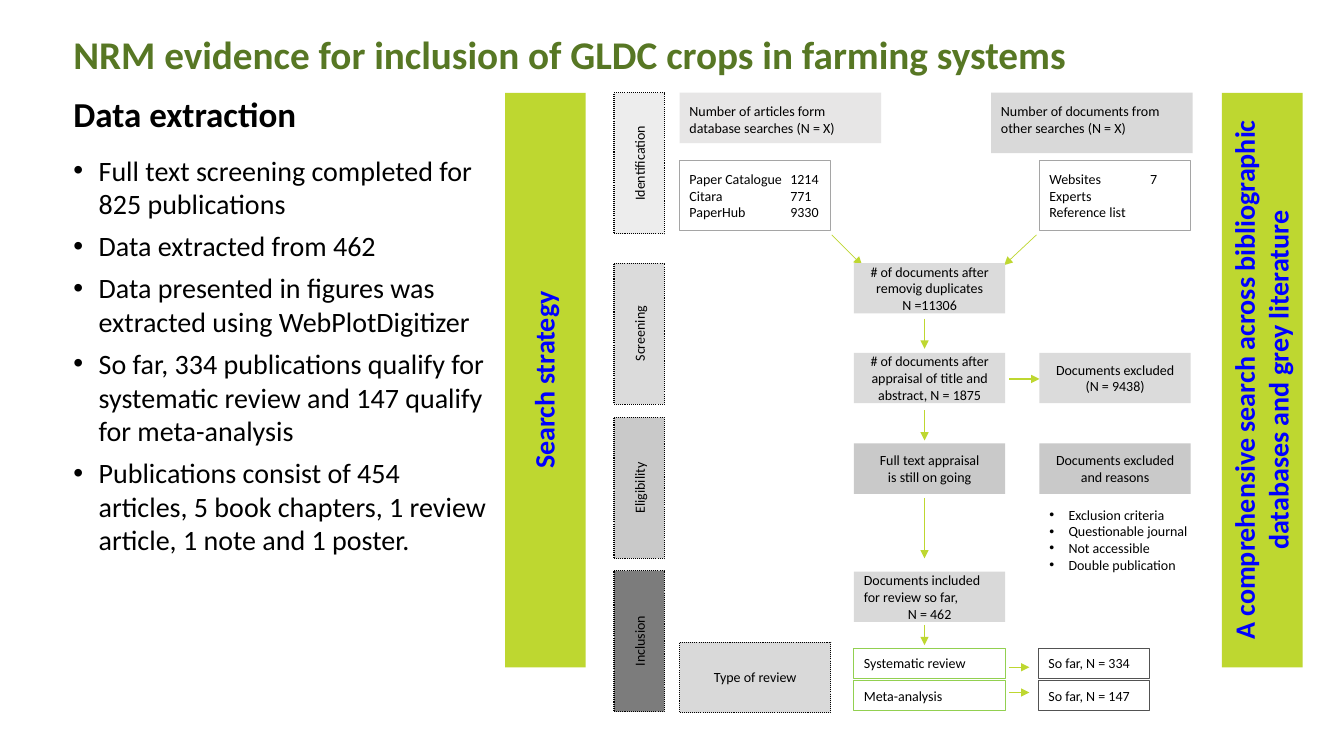
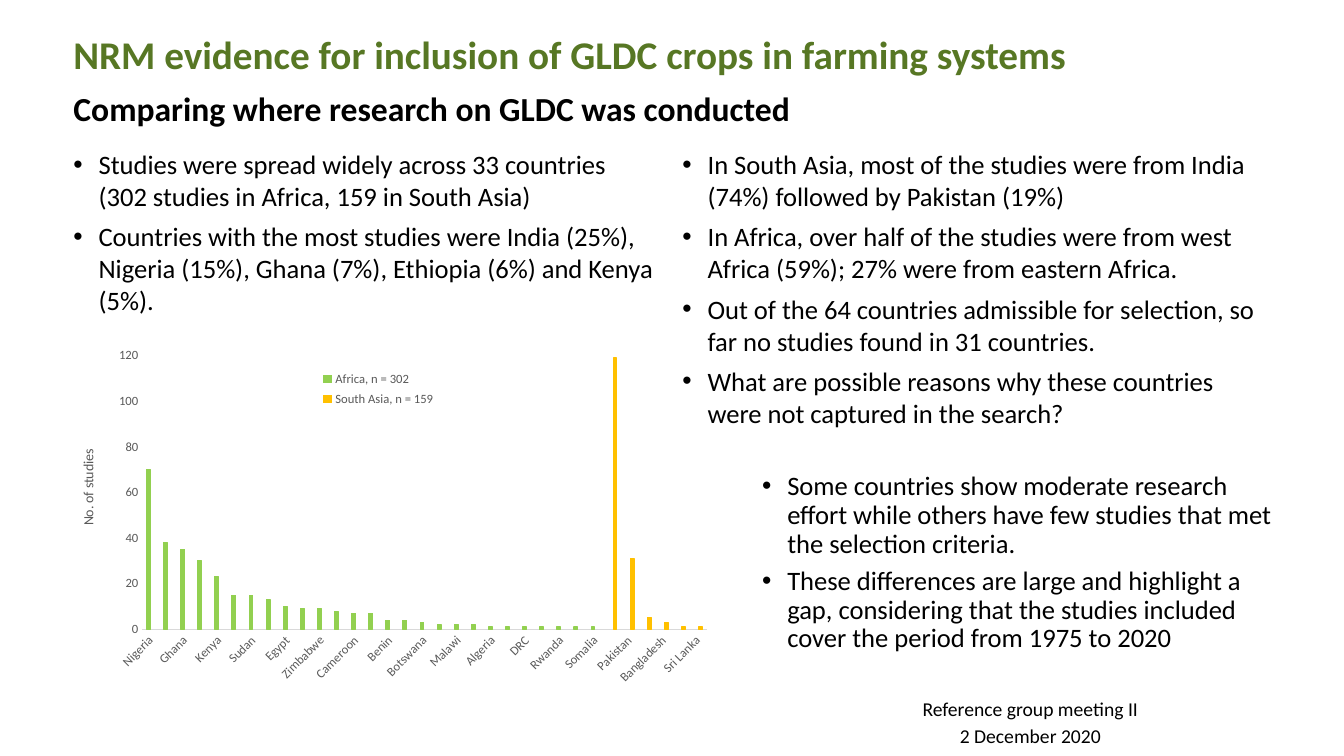
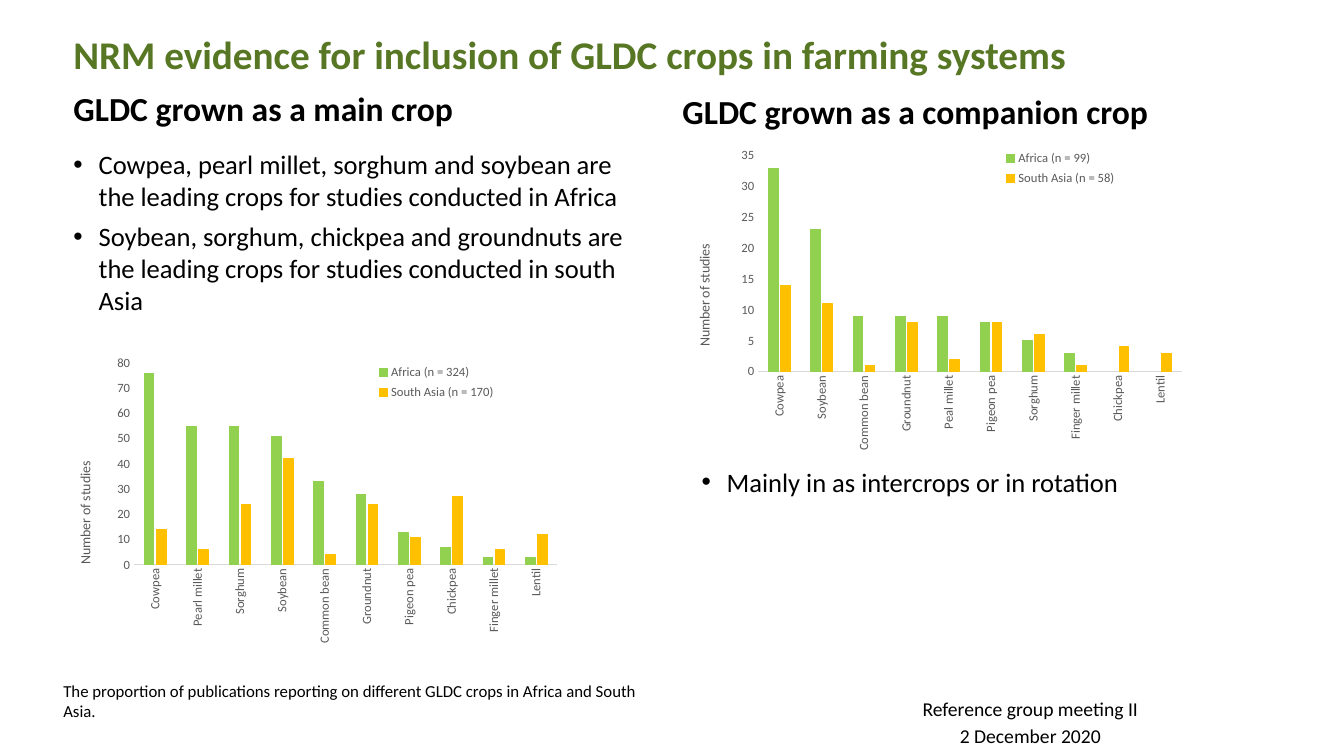
from collections import namedtuple

from lxml import etree
from pptx import Presentation
from pptx.chart.data import CategoryChartData
from pptx.dml.color import RGBColor
from pptx.enum.chart import XL_CHART_TYPE, XL_LEGEND_POSITION, XL_TICK_MARK
from pptx.enum.dml import MSO_LINE
from pptx.enum.shapes import MSO_CONNECTOR, MSO_SHAPE
from pptx.enum.text import MSO_ANCHOR, PP_ALIGN
from pptx.oxml.ns import qn
from pptx.util import Inches, Pt

COLUMN_CLUSTERED = XL_CHART_TYPE.COLUMN_CLUSTERED
CORNER = XL_LEGEND_POSITION.CORNER
NO_TICK = XL_TICK_MARK.NONE
DOTTED = MSO_LINE.ROUND_DOT
STRAIGHT = MSO_CONNECTOR.STRAIGHT
RECTANGLE = MSO_SHAPE.RECTANGLE
TOP, MIDDLE = MSO_ANCHOR.TOP, MSO_ANCHOR.MIDDLE
LEFT, CENTER = PP_ALIGN.LEFT, PP_ALIGN.CENTER

FONT = "Calibri"
BLACK = RGBColor(0x00, 0x00, 0x00)
BLUE = RGBColor(0x00, 0x00, 0xFF)
TITLE_GREEN = RGBColor(0x57, 0x77, 0x24)
LIME = RGBColor(0xBE, 0xD7, 0x30)
GREEN = RGBColor(0x92, 0xD0, 0x50)
AMBER = RGBColor(0xFF, 0xC0, 0x00)
CHART_TEXT = RGBColor(0x59, 0x59, 0x59)
SILVER = RGBColor(0xD9, 0xD9, 0xD9)
PALE = RGBColor(0xE7, 0xE6, 0xE6)
FAINT = RGBColor(0xED, 0xED, 0xED)
LIGHT = RGBColor(0xDB, 0xDB, 0xDB)
MEDIUM = RGBColor(0xC9, 0xC9, 0xC9)
DARK = RGBColor(0x7C, 0x7C, 0x7C)
LIST_LINE = RGBColor(0xA5, 0xA5, 0xA5)
RESULT_LINE = RGBColor(0x52, 0x52, 0x52)

Box = namedtuple("Box", "left top width height")
Places = namedtuple("Places", "plot legend title")

PAGE = Box(0, 0, 13.33, 7.5)
MARGIN = 0.63
SECOND_COLUMN = 6.67
COLUMN_WIDTH = 6
HEADING_TOP = 0.87
BODY_TOP = 1.42
BAND_TOP = 0.92
TITLE = "NRM evidence for inclusion of GLDC crops in farming systems"
FOOTER = ["Reference group meeting II", "2 December 2020"]


def emu(box):
    return [Inches(length) for length in box]


def within(region, left, top, width, height):
    return Box(region.left + left, region.top + top, width, height)


def write_text(holder, text, size=10, color=BLACK, bold=False, align=LEFT, anchor=TOP,
               inset=0.05, indent=0, tab=0, before=0, spacing=1.0):
    frame = holder.text_frame
    frame.word_wrap = True
    frame.vertical_anchor = anchor
    frame.margin_left = frame.margin_right = Inches(0.1)
    frame.margin_top = frame.margin_bottom = Inches(inset)
    lines = [text] if isinstance(text, str) else text
    for index, line in enumerate(lines):
        para = frame.add_paragraph() if index else frame.paragraphs[0]
        properties = para._p.get_or_add_pPr()
        if indent:
            properties.set("marL", str(Inches(indent)))
            properties.set("indent", str(-Inches(indent)))
            etree.SubElement(properties, qn("a:buFont")).set("typeface", "Arial")
            etree.SubElement(properties, qn("a:buChar")).set("char", "•")
        if tab:
            stops = etree.SubElement(properties, qn("a:tabLst"))
            etree.SubElement(stops, qn("a:tab"), pos=str(Inches(tab)), algn="l")
        para.alignment = align
        para.line_spacing = spacing
        if index:
            para.space_before = Pt(before)
        span = para.add_run()
        span.text = line
        span.font.name = FONT
        span.font.size = Pt(size)
        span.font.bold = bold
        span.font.color.rgb = color


def add_text(page, box, text, **style):
    write_text(page.shapes.add_textbox(*emu(box)), text, **style)


def add_heading(page, box, text, size=24, color=BLACK):
    add_text(page, box, text, size=size, color=color, bold=True, spacing=0.9)


def add_bullets(page, box, lines, size=19, spacing=1.0):
    add_text(page, box, lines, size=size, indent=0.25, before=6, spacing=spacing)


def add_footer(page):
    box = Box(8.97, 6.86, 2.5, 0.62)
    add_text(page, box, FOOTER, size=14, align=CENTER, before=2.8)


def new_page(deck):
    page = deck.slides.add_slide(deck.slide_layouts[6])
    add_heading(page, Box(MARGIN, 0.3, 10.33, 0.54), TITLE, size=28, color=TITLE_GREEN)
    return page


def add_block(page, box, text, fill=None, line=None, dotted=False, **style):
    block = page.shapes.add_shape(RECTANGLE, *emu(box))
    block.shadow.inherit = False
    if fill is None:
        block.fill.background()
    else:
        block.fill.solid()
        block.fill.fore_color.rgb = fill
    if line is None:
        block.line.fill.background()
    else:
        block.line.color.rgb = line
        block.line.width = Pt(0.75)
        if dotted:
            block.line.dash_style = DOTTED
    write_text(block, text, **style)
    return block


def add_upright(page, box, text, anchor=MIDDLE, **style):
    middle = box.left + box.width / 2
    center = box.top + box.height / 2
    turned = Box(middle - box.height / 2, center - box.width / 2, box.height, box.width)
    add_block(page, turned, text, align=CENTER, anchor=anchor, **style).rotation = 270


def add_arrow(page, region, start, end, width=0.75):
    points = [Inches(region[axis] + point[axis]) for point in (start, end) for axis in (0, 1)]
    arrow = page.shapes.add_connector(STRAIGHT, *points)
    arrow.line.color.rgb = LIME
    arrow.line.width = Pt(width)
    properties = arrow._element.spPr
    etree.SubElement(properties.find(qn("a:ln")), qn("a:tailEnd")).set("type", "triangle")
    etree.SubElement(properties, qn("a:effectLst"))


def draw_stages(page, region):
    stages = [("Identification", FAINT, 0), ("Screening", LIGHT, 1.69),
              ("Eligibility", MEDIUM, 3.22), ("Inclusion", DARK, 4.74)]
    for name, fill, top in stages:
        add_upright(page, within(region, 0, top, 0.5, 1.4), name, fill=fill,
                    line=BLACK, dotted=True, inset=0.1)


def draw_sources(page, region, source, last):
    add_block(page, within(region, source, 0, 2, 0.5),
              "Number of articles form database searches (N = X)", fill=PALE, inset=0.1)
    add_block(page, within(region, 3.74, 0, 2, 0.6),
              "Number of documents from other searches (N = X)", fill=SILVER, inset=0.1)
    lists = [(source, ["Paper Catalogue\t1214", "Citara\t771", "PaperHub\t9330"]),
             (last, ["Websites\t7", "Experts", "Reference list"])]
    for left, lines in lists:
        add_block(page, within(region, left, 0.67, 1.5, 0.7), lines, line=LIST_LINE,
                  inset=0.1, tab=1)
    for start, end in [((2.16, 1.41), (2.46, 1.71)), ((4.19, 1.41), (3.87, 1.71))]:
        add_arrow(page, region, start, end, width=0.5)


def draw_flow(page, region):
    source, middle, last = 0.65, 2.38, 4.22
    draw_stages(page, region)
    draw_sources(page, region, source, last)
    steps = [
        (middle, 1.69, LIGHT, ["# of documents after removig duplicates", "N =11306"]),
        (middle, 2.58, LIGHT, "# of documents after appraisal of title and abstract, N = 1875"),
        (last, 2.58, LIGHT, "Documents excluded (N = 9438)"),
        (middle, 3.48, MEDIUM, ["Full text appraisal", "is still on going"]),
        (last, 3.48, MEDIUM, "Documents excluded and reasons"),
    ]
    for left, top, fill, text in steps:
        add_block(page, within(region, left, top, 1.5, 0.5), text, fill=fill,
                  align=CENTER, anchor=MIDDLE, inset=0.1)
    included = add_block(page, within(region, middle, 4.75, 1.5, 0.5),
                         ["Documents included for review so far,", "N = 462"],
                         fill=SILVER, anchor=MIDDLE, inset=0.1)
    included.text_frame.paragraphs[1].alignment = CENTER
    add_text(page, within(region, last, 4, 1.63, 0.88),
             ["Exclusion criteria", "Questionable journal", "Not accessible",
              "Double publication"], indent=0.19, inset=0.1)
    add_block(page, within(region, source, 5.45, 1.5, 0.7), "Type of review", fill=SILVER,
              line=BLACK, dotted=True, align=CENTER, anchor=MIDDLE, inset=0.1)
    reviews = [("Systematic review", "So far, N = 334"), ("Meta-analysis", "So far, N = 147")]
    for row, (review, result) in enumerate(reviews):
        top = 5.51 + row * 0.32
        add_block(page, within(region, middle, top, 1.5, 0.3), review, line=GREEN,
                  anchor=MIDDLE, inset=0.1)
        add_block(page, within(region, 4.21, top, 1.1, 0.3), result, line=RESULT_LINE,
                  anchor=MIDDLE, inset=0.1)
        level = 5.7 + row * 0.25
        add_arrow(page, region, (3.92, level), (4.12, level))
    add_arrow(page, region, (3.92, 2.84), (last, 2.84))
    for top, bottom in [(2.24, 2.54), (3.15, 3.45), (4.02, 4.62), (5.28, 5.48)]:
        add_arrow(page, region, (3.08, top), (3.08, bottom))


def place_part(element, index, shares, inner=False):
    for old in element.findall(qn("c:layout")):
        element.remove(old)
    layout = etree.Element(qn("c:layout"))
    manual = etree.SubElement(layout, qn("c:manualLayout"))
    settings = [("layoutTarget", "inner")] if inner else []
    settings += [("xMode", "edge"), ("yMode", "edge")]
    settings += list(zip("xywh", shares))
    for name, value in settings:
        etree.SubElement(manual, qn("c:" + name)).set("val", str(value))
    element.insert(index, layout)


def style_font(font, size):
    font.name = FONT
    font.size = Pt(size)
    font.bold = False
    font.color.rgb = CHART_TEXT


def turn_text(element, degrees):
    body = element.find(".//" + qn("a:bodyPr"))
    body.set("rot", str(degrees * 60000))
    body.set("vert", "horz")


def add_column_chart(page, box, categories, series, axis_title, top_value, step, places,
                     label_turn=-90):
    data = CategoryChartData()
    data.categories = categories
    for name, values in series:
        data.add_series(name, values)
    chart = page.shapes.add_chart(COLUMN_CLUSTERED, *emu(box), data).chart
    chart.has_title = False
    style_font(chart.font, 10)

    plot = chart.plots[0]
    plot.vary_by_categories = False
    plot.gap_width = 219
    plot.overlap = -27
    for bars, color in zip(plot.series, (GREEN, AMBER)):
        bars.format.fill.solid()
        bars.format.fill.fore_color.rgb = color
        bars.format.line.color.rgb = color
        bars.format.line.width = Pt(0.75)

    names, values = chart.category_axis, chart.value_axis
    for axis in (names, values):
        axis.major_tick_mark = axis.minor_tick_mark = NO_TICK
        axis.has_major_gridlines = False
        style_font(axis.tick_labels.font, 9)
    names.format.line.color.rgb = SILVER
    names.format.line.width = Pt(0.75)
    turn_text(names._element.find(qn("c:txPr")), label_turn)
    values.format.line.fill.background()
    values.minimum_scale, values.maximum_scale, values.major_unit = 0, top_value, step

    frame = values.axis_title.text_frame
    frame.text = axis_title
    style_font(frame.paragraphs[0].runs[0].font, 10)
    title = values.axis_title._element
    turn_text(title, -90)

    chart.has_legend = True
    chart.legend.position = CORNER
    chart.legend.include_in_layout = True
    style_font(chart.legend.font, 9)
    place_part(chart.legend._element, 1, places.legend)
    place_part(title, 1, places.title)
    place_part(chart._chartSpace.find(".//" + qn("c:plotArea")), 0, places.plot, inner=True)


def build_extraction(deck):
    page = new_page(deck)
    add_heading(page, Box(MARGIN, BAND_TOP, 4.37, 0.48), "Data extraction", size=25)
    add_bullets(page, Box(MARGIN, 1.47, 4.38, 4.14), [
        "Full text screening completed for 825 publications",
        "Data extracted from 462",
        "Data presented in figures was extracted using WebPlotDigitizer",
        "So far, 334 publications qualify for systematic review and 147 qualify "
        "for meta-analysis",
        "Publications consist of 454 articles, 5 book chapters, 1 review article, "
        "1 note and 1 poster.",
    ], size=20)
    bands = [(5.01, "Search strategy", MIDDLE, 0.9),
             (12.12, "A comprehensive search across bibliographic databases and grey "
              "literature", TOP, 1.0)]
    for left, text, anchor, spacing in bands:
        add_upright(page, Box(left, BAND_TOP, 0.8, 5.7), text, anchor=anchor, fill=LIME,
                    size=20, color=BLUE, bold=True, spacing=spacing)
    draw_flow(page, Box(6.09, BAND_TOP, 5.85, 6.15))


def build_countries(deck):
    page = new_page(deck)
    add_heading(page, Box(MARGIN, HEADING_TOP, 7.69, 0.46),
                "Comparing where research on GLDC was conducted")
    add_bullets(page, Box(MARGIN, BODY_TOP, COLUMN_WIDTH, 1.78), [
        "Studies were spread widely across 33 countries (302 studies in Africa, "
        "159 in South Asia)",
        "Countries with the most studies were India (25%), Nigeria (15%), Ghana (7%), "
        "Ethiopia (6%) and Kenya (5%).",
    ])
    add_bullets(page, Box(SECOND_COLUMN, BODY_TOP, COLUMN_WIDTH, 2.91), [
        "In South Asia, most of the studies were from India (74%) followed by Pakistan (19%)",
        "In Africa, over half of the studies were from west Africa (59%); 27% were from "
        "eastern Africa.",
        "Out of the 64 countries admissible for selection, so far no studies found in "
        "31 countries.",
        "What are possible reasons why these countries were not captured in the search?",
    ])
    add_bullets(page, Box(7.46, 4.64, 5.31, 1.91), [
        "Some countries show moderate research effort while others have few studies that "
        "met the selection criteria.",
        "These differences are large and highlight a gap, considering that the studies "
        "included cover the period from 1975 to 2020",
    ], spacing=0.9)
    african = ["Nigeria", "Niger", "Ghana", "Ethiopia", "Kenya", "South Africa", "Sudan",
               "Burkina Faso", "Egypt", "Senegal", "Zimbabwe", "Tanzania", "Cameroon", "Mali",
               "Benin", "Uganda", "Botswana", "Eritrea", "Malawi", "Morocco", "Algeria",
               "Côte d’Ivoire", "DRC", "Mozambique", "Rwanda", "Sierra Leone", "Somalia"]
    asian = ["India", "Pakistan", "Nepal", "Bangladesh", "Ghana", "Sri Lanka"]
    africa = [70, 38, 35, 30, 23, 15, 15, 13, 10, 9, 9, 8, 7, 7, 4, 4, 3, 2, 2, 2] + [1] * 7
    asia = [119, 31, 5, 3, 1, 1]
    add_column_chart(
        page, Box(MARGIN, 3.39, 6.51, 3.48), african + asian,
        [("Africa, n = 302", africa + [None] * len(asian)),
         ("South Asia, n = 159", [None] * len(african) + asia)],
        "No. of studies", 120, 20,
        Places((0.12, 0.04, 0.86, 0.78), (0.38, 0.07, 0.2, 0.13), (0.02, 0.3)),
        label_turn=-45)
    add_footer(page)


def build_crops(deck):
    page = new_page(deck)
    add_heading(page, Box(MARGIN, HEADING_TOP, COLUMN_WIDTH, 0.46), "GLDC grown as a main crop")
    add_heading(page, Box(SECOND_COLUMN, 0.9, COLUMN_WIDTH, 0.46),
                "GLDC grown as a companion crop")
    add_bullets(page, Box(MARGIN, BODY_TOP, 5.85, 1.78), [
        "Cowpea, pearl millet, sorghum and soybean are the leading crops for studies "
        "conducted in Africa",
        "Soybean, sorghum, chickpea and groundnuts are the leading crops for studies "
        "conducted in south Asia",
    ])
    add_bullets(page, Box(6.86, 4.57, COLUMN_WIDTH, 0.42),
                ["Mainly in as intercrops or in rotation"])
    add_column_chart(
        page, Box(MARGIN, 3.53, 5, 3),
        ["Cowpea", "Pearl millet", "Sorghum", "Soybean", "Common bean", "Groundnut",
         "Pigeon pea", "Chickpea", "Finger millet", "Lentil"],
        [("Africa (n = 324)", [76, 55, 55, 51, 33, 28, 13, 7, 3, 3]),
         ("South Asia (n = 170)", [14, 6, 24, 42, 4, 24, 11, 27, 6, 12])],
        "Number of studies", 80, 10,
        Places((0.14, 0.02, 0.84, 0.67), (0.6, 0.01, 0.28, 0.15), (0.02, 0.34)))
    add_column_chart(
        page, Box(6.82, BODY_TOP, 5, 3.15),
        ["Cowpea", "Soybean", "Common bean", "Groundnut", "Peal millet", "Pigeon pea",
         "Sorghum", "Finger millet", "Chickpea", "Lentil"],
        [("Africa (n = 99)", [33, 23, 9, 9, 9, 8, 5, 3, None, None]),
         ("South Asia (n = 58)", [14, 11, 1, 8, 2, 8, 6, 1, 4, 3])],
        "Number of studies", 35, 5,
        Places((0.14, 0.04, 0.84, 0.68), (0.6, 0.01, 0.28, 0.14), (0.01, 0.31)))
    add_text(page, Box(0.53, 6.7, 6.2, 0.3),
             "The proportion of publications reporting on different GLDC crops in Africa "
             "and South Asia.", size=12)
    add_footer(page)


def main():
    deck = Presentation()
    deck.slide_width, deck.slide_height = Inches(PAGE.width), Inches(PAGE.height)
    for build in (build_extraction, build_countries, build_crops):
        build(deck)
    deck.save("out.pptx")


if __name__ == "__main__":
    main()
